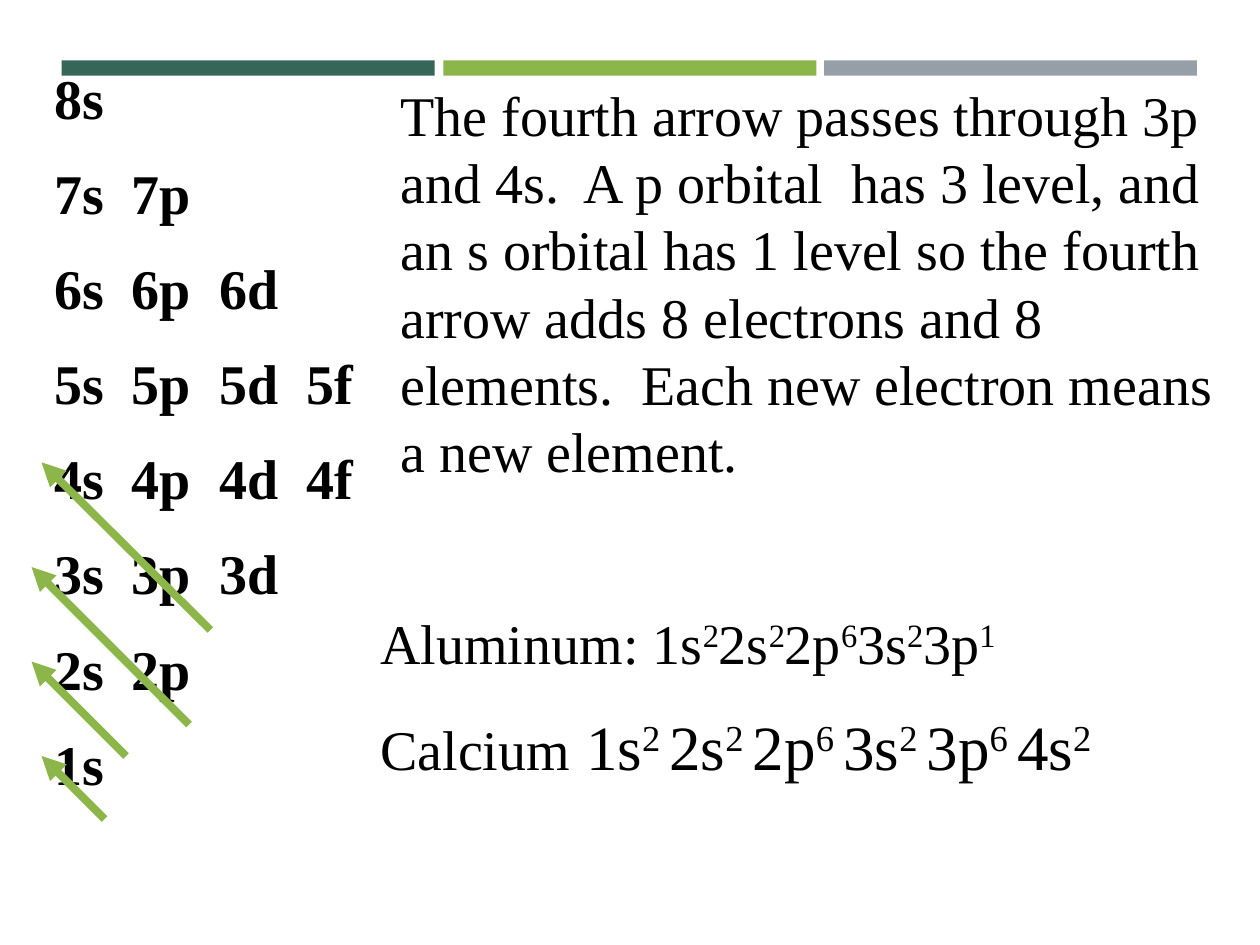
"""Build a slide on filling electron orbitals along diagonal arrows."""
from dataclasses import dataclass

import pptx
import pptx.dml.color
import pptx.enum.shapes
import pptx.enum.text
import pptx.oxml
import pptx.oxml.ns
import pptx.shapes.base
import pptx.slide
import pptx.util

Inches = pptx.util.Inches
GREEN = "8CB64A"
BLACK = "000000"
FONT = "Times New Roman"
LINE_RATIO = 1.2
FRAME_FORMAT = {
    "word_wrap": True,
    "auto_size": pptx.enum.text.MSO_AUTO_SIZE.NONE,
    "vertical_anchor": pptx.enum.text.MSO_ANCHOR.TOP,
    "margin_left": Inches(0.1),
    "margin_right": Inches(0.1),
    "margin_top": Inches(0.08),
    "margin_bottom": Inches(0.05),
}


@dataclass(frozen=True)
class Box:
    left: float
    top: float
    width: float
    height: float

    def lengths(self) -> list[int]:
        return [Inches(n) for n in (self.left, self.top, self.width, self.height)]


@dataclass(frozen=True)
class Bar:
    left: float
    color: str


@dataclass(frozen=True)
class Arrow:
    start: tuple[float, float]
    end: tuple[float, float]


@dataclass(frozen=True)
class Piece:
    text: str
    size: int = 32
    raised: bool = False


BARS = [Bar(0.49, "366658"), Bar(3.52, GREEN), Bar(6.54, "969FA7")]
ARROWS = [
    Arrow((0.83, 6.5), (0.33, 6)),
    Arrow((1, 6), (0.25, 5.25)),
    Arrow((1.5, 5.75), (0.25, 4.5)),
    Arrow((1.67, 5), (0.33, 3.67)),
]
ORBITALS = ["8s", "7s  7p", "6s  6p  6d", "5s  5p  5d  5f",
            "4s  4p  4d  4f", "3s  3p  3d", "2s  2p", "1s"]
EXPLANATION = (
    "The fourth arrow passes through 3p and 4s.  A p orbital  has 3 level, "
    "and an s orbital has 1 level so the fourth arrow adds 8 electrons and 8 "
    "elements.  Each new electron means a new element."
)
ALUMINUM = ["1s2", "2s2", "2p6", "3s2", "3p1"]
CALCIUM = ["1s2", "2s2", "2p6", "3s2", "3p6", "4s2"]


def rgb(color: str) -> pptx.dml.color.RGBColor:
    return pptx.dml.color.RGBColor.from_string(color)


def apply_format(target: object, values: dict[str, object]) -> None:
    for name, value in values.items():
        setattr(target, name, value)


def configuration(label: str, shells: list[str], size: int, gap: str = "") -> list[Piece]:
    """Split each subshell into its name and its raised electron count."""
    pieces = [Piece(label)]
    for index, shell in enumerate(shells):
        lead = " " if index == 0 else ""
        trail = gap if index < len(shells) - 1 else ""
        pieces += [Piece(lead + shell[:-1], size), Piece(shell[-1] + trail, size, True)]
    return pieces


def write(shape: pptx.shapes.base.BaseShape, lines: list[list[Piece]], bold: bool = False) -> None:
    frame = shape.text_frame
    apply_format(frame, FRAME_FORMAT)
    for index, pieces in enumerate(lines):
        paragraph = frame.add_paragraph() if index else frame.paragraphs[0]
        size = max(piece.size for piece in pieces)
        apply_format(paragraph, {
            "alignment": pptx.enum.text.PP_ALIGN.LEFT,
            "line_spacing": pptx.util.Pt(size * LINE_RATIO),
            "space_before": pptx.util.Pt(size / 2),
            "space_after": pptx.util.Pt(0),
        })
        properties = paragraph._p.get_or_add_pPr()
        apply_format(properties, {"marL": 0, "indent": 0})
        properties.set("marL", "0")
        properties.set("indent", "0")
        properties.append(pptx.oxml.parse_xml(
            f'<a:buNone {pptx.oxml.ns.nsdecls("a")}/>'))
        for piece in pieces:
            run = paragraph.add_run()
            run.text = piece.text
            apply_format(run.font, {
                "name": FONT, "size": pptx.util.Pt(piece.size), "bold": bold})
            run.font.color.rgb = rgb(BLACK)
            if piece.raised:
                run._r.get_or_add_rPr().set("baseline", "30000")


def draw_bar(slide: pptx.slide.Slide, bar: Bar) -> None:
    rectangle = slide.shapes.add_shape(
        pptx.enum.shapes.MSO_SHAPE.RECTANGLE, *Box(bar.left, 0.48, 2.96, 0.12).lengths())
    rectangle.shadow.inherit = False
    rectangle.fill.solid()
    rectangle.fill.fore_color.rgb = rgb(bar.color)
    rectangle.line.fill.background()


def draw_arrow(slide: pptx.slide.Slide, arrow: Arrow) -> None:
    ends = [Inches(n) for n in arrow.start + arrow.end]
    connector = slide.shapes.add_connector(
        pptx.enum.shapes.MSO_CONNECTOR.STRAIGHT, *ends)
    connector.line.width = pptx.util.Pt(4.5)
    connector.line.color.rgb = rgb(GREEN)
    properties = connector._element.spPr
    namespace = pptx.oxml.ns.nsdecls("a")
    properties.find(pptx.oxml.ns.qn("a:ln")).append(
        pptx.oxml.parse_xml(f'<a:tailEnd {namespace} type="triangle"/>'))
    properties.append(pptx.oxml.parse_xml(f"<a:effectLst {namespace}/>"))


def main() -> None:
    deck = pptx.Presentation()
    apply_format(deck, {"slide_width": Inches(10), "slide_height": Inches(7.5)})
    slide = deck.slides.add_slide(deck.slide_layouts[1])
    title, orbitals = slide.placeholders
    title._element.getparent().remove(title._element)

    for bar in BARS:
        draw_bar(slide, bar)

    left, top, width, height = Box(0.33, 0.42, 2.67, 6.84).lengths()
    apply_format(orbitals, {"left": left, "top": top, "width": width, "height": height})
    write(orbitals, [[Piece(row)] for row in ORBITALS], bold=True)
    slide.shapes._spTree.append(orbitals._element)

    examples = slide.shapes.add_textbox(*Box(2.92, 4.75, 6.42, 1.53).lengths())
    write(examples, [configuration("Aluminum:", ALUMINUM, 32),
                     configuration("Calcium", CALCIUM, 36, gap=" ")])

    for arrow in ARROWS:
        draw_arrow(slide, arrow)

    explanation = slide.shapes.add_textbox(*Box(3.08, 0.56, 6.67, 3.3).lengths())
    write(explanation, [[Piece(EXPLANATION)]])
    deck.save("out.pptx")


if __name__ == "__main__":
    main()
